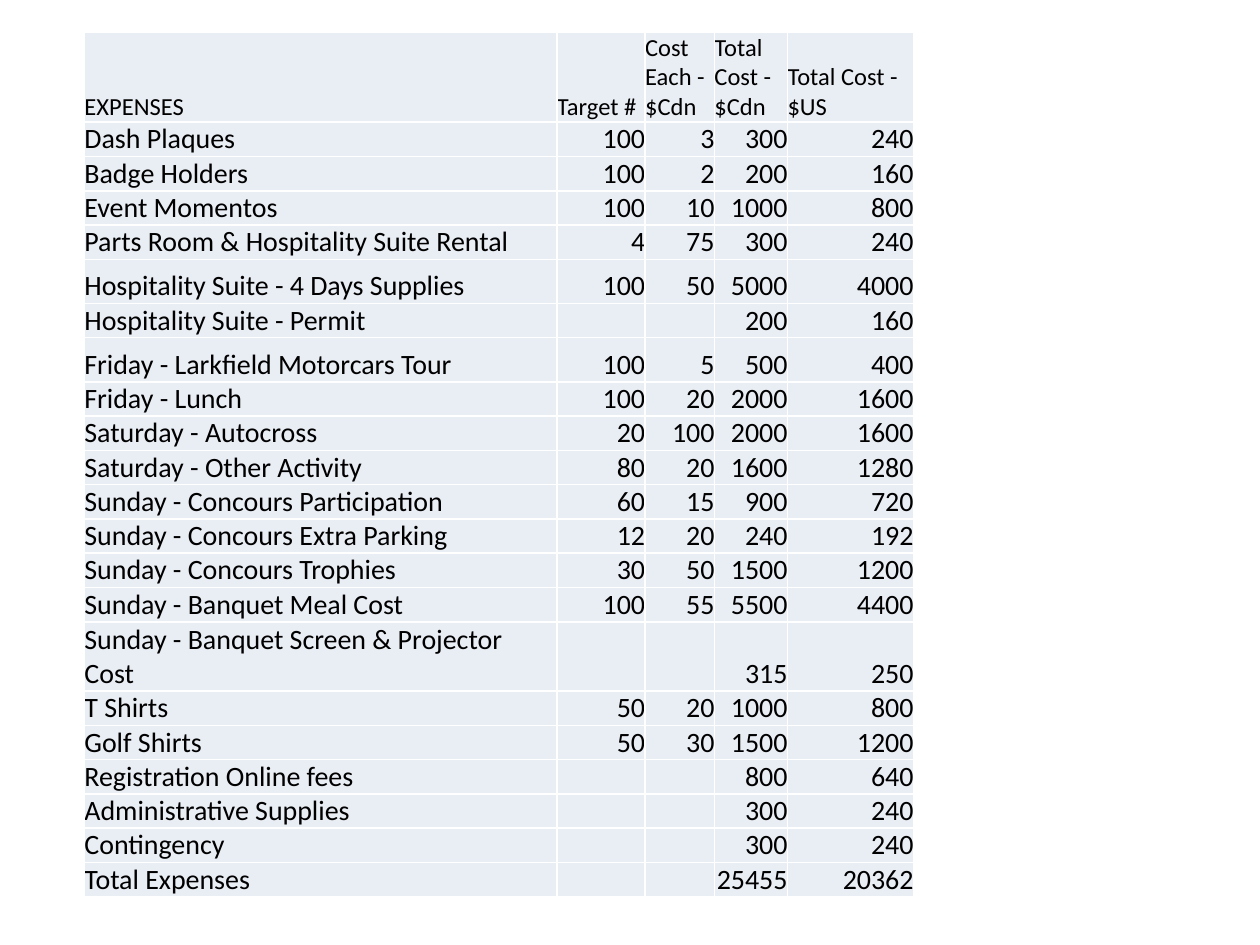
from typing import NamedTuple

from lxml import etree
from pptx import Presentation
from pptx.dml.color import RGBColor
from pptx.enum.text import MSO_ANCHOR, PP_ALIGN
from pptx.oxml.ns import qn
from pptx.util import Inches, Pt

BOTTOM = MSO_ANCHOR.BOTTOM
LEFT, RIGHT = PP_ALIGN.LEFT, PP_ALIGN.RIGHT
INK = RGBColor(0x00, 0x00, 0x00)
CELL_FILL = RGBColor(0xE9, 0xED, 0xF4)
BORDER = RGBColor(0xFF, 0xFF, 0xFF)
BORDER_WIDTH = Pt(1)
HEADER_SIZE, BODY_SIZE = 14, 16
LINE_HEIGHT = 0.27
COLUMN_WIDTHS = (3.75, 0.7, 0.55, 0.58, 1)
HEADINGS = ("EXPENSES", "Target #", "Cost Each - $Cdn", "Total Cost - $Cdn", "Total Cost - $US")
CELL_FORMAT = {
    "margin_left": 0,
    "margin_top": 0,
    "margin_right": 0,
    "margin_bottom": 0,
    "vertical_anchor": BOTTOM,
}


class Expense(NamedTuple):
    """One budget line of the table."""

    label: str
    target: str
    cost_each: str
    total_cdn: str
    total_us: str
    height: float = LINE_HEIGHT


EXPENSES = (
    Expense("Dash Plaques", "100", "3", "300", "240"),
    Expense("Badge Holders", "100", "2", "200", "160"),
    Expense("Event Momentos", "100", "10", "1000", "800"),
    Expense("Parts Room & Hospitality Suite Rental", "4", "75", "300", "240"),
    Expense("Hospitality Suite - 4 Days Supplies", "100", "50", "5000", "4000", 0.35),
    Expense("Hospitality Suite - Permit", "", "", "200", "160"),
    Expense("Friday - Larkfield Motorcars Tour", "100", "5", "500", "400", 0.35),
    Expense("Friday - Lunch", "100", "20", "2000", "1600"),
    Expense("Saturday - Autocross", "20", "100", "2000", "1600"),
    Expense("Saturday - Other Activity", "80", "20", "1600", "1280"),
    Expense("Sunday - Concours Participation", "60", "15", "900", "720"),
    Expense("Sunday - Concours Extra Parking", "12", "20", "240", "192"),
    Expense("Sunday - Concours Trophies", "30", "50", "1500", "1200"),
    Expense("Sunday - Banquet Meal Cost", "100", "55", "5500", "4400"),
    Expense("Sunday - Banquet Screen & Projector Cost", "", "", "315", "250", 0.55),
    Expense("T Shirts", "50", "20", "1000", "800"),
    Expense("Golf Shirts", "50", "30", "1500", "1200"),
    Expense("Registration Online fees", "", "", "800", "640"),
    Expense("Administrative Supplies", "", "", "300", "240"),
    Expense("Contingency", "", "", "300", "240"),
    Expense("Total Expenses", "", "", "25455", "20362"),
)
ROWS = (Expense(*HEADINGS, height=0.7), *EXPENSES)


def add_borders(cell) -> None:
    """Draw a thin line on each side of a cell."""
    properties = cell._tc.get_or_add_tcPr()
    for side in ("a:lnL", "a:lnR", "a:lnT", "a:lnB"):
        line = etree.SubElement(properties, qn(side), w=str(BORDER_WIDTH))
        fill = etree.SubElement(line, qn("a:solidFill"))
        etree.SubElement(fill, qn("a:srgbClr"), val=str(BORDER))


def fill_cell(cell, text: str, size: int, alignment: PP_ALIGN) -> None:
    """Format a cell and write its text."""
    add_borders(cell)
    for name, value in CELL_FORMAT.items():
        setattr(cell, name, value)
    cell.fill.solid()
    cell.fill.fore_color.rgb = CELL_FILL
    para = cell.text_frame.paragraphs[0]
    para.alignment = alignment
    if not text:
        etree.SubElement(para._p, qn("a:endParaRPr"), sz=str(size * 100))
        return
    span = para.add_run()
    span.text = text
    for name, value in {"name": "Calibri", "size": Pt(size)}.items():
        setattr(span.font, name, value)
    span.font.color.rgb = INK


def add_expense_table(page) -> None:
    """Add the expense budget to the page."""
    height = sum(row.height for row in ROWS)
    frame = page.shapes.add_table(
        len(ROWS), len(COLUMN_WIDTHS),
        Inches(0.67), Inches(0.26), Inches(sum(COLUMN_WIDTHS)), Inches(height),
    )
    table = frame.table
    table.first_row = False
    table.horz_banding = False
    for column, width in zip(table.columns, COLUMN_WIDTHS):
        column.width = Inches(width)
    for index, row in enumerate(ROWS):
        table.rows[index].height = Inches(row.height)
        size = BODY_SIZE if index else HEADER_SIZE
        for position, text in enumerate(row[:-1]):
            alignment = RIGHT if index and position else LEFT
            fill_cell(table.cell(index, position), text, size, alignment)


def main() -> None:
    """Build and save the deck."""
    deck = Presentation()
    deck.slide_width = Inches(10)
    deck.slide_height = Inches(7.5)
    add_expense_table(deck.slides.add_slide(deck.slide_layouts[6]))
    deck.save("out.pptx")


if __name__ == "__main__":
    main()
